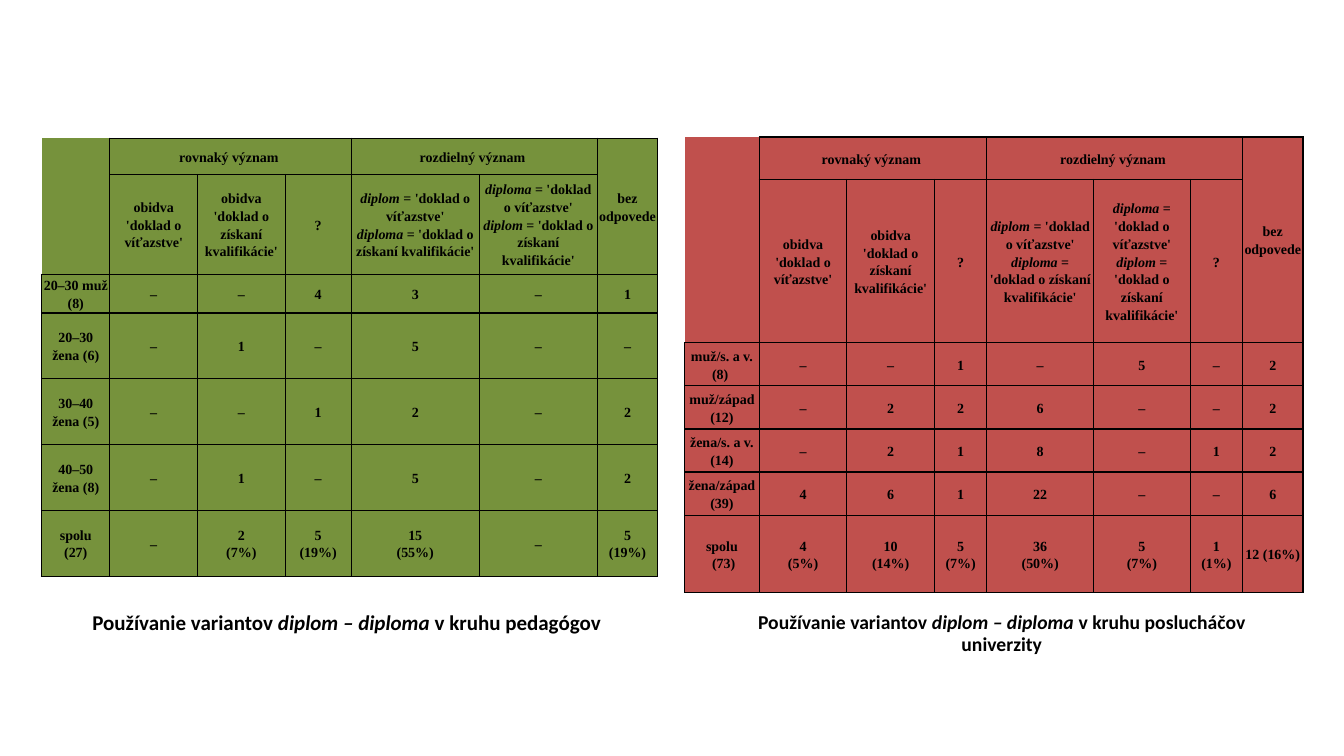
from dataclasses import dataclass

from lxml.etree import SubElement
from pptx import Presentation
from pptx.dml.color import RGBColor
from pptx.enum.text import MSO_ANCHOR, PP_ALIGN
from pptx.oxml.ns import qn
from pptx.util import Pt


@dataclass(frozen=True)
class Theme:
    green: str = "76923C"
    red: str = "C0504D"
    black: str = "000000"
    table_font: str = "Times New Roman"
    caption_font: str = "Calibri"
    table_size: float = 10
    teachers_caption_size: float = 15
    students_caption_size: float = 14
    border_width: float = 1


THEME = Theme()

# Asterisks enclose italic words; a line break starts a new paragraph.
SAME = "rovnaký význam "
DIFFERENT = "rozdielný význam "
NO_ANSWER = "bez odpovede"
MEANINGS = [
    "",
    "obidva 'doklad o víťazstve'",
    "obidva 'doklad o získaní kvalifikácie'",
    "?",
    "*diplom* = 'doklad o víťazstve'\n*diploma* = 'doklad o získaní kvalifikácie'",
    "*diploma *= 'doklad o víťazstve'\n*diplom* = 'doklad o získaní kvalifikácie'",
]

TEACHERS = [
    ["", SAME, "", "", DIFFERENT, "", NO_ANSWER],
    [*MEANINGS, ""],
    ["20–30 muž (8)", "–", "–", "4", "3", "–", "1"],
    ["20–30\nžena (6)", "–", "1", "–", "5", "–", "–"],
    ["30–40\nžena (5)", "–", "–", "1", "2", "–", "2"],
    ["40–50\nžena (8)", "–", "1", "–", "5", "–", "2"],
    ["spolu\n(27)", "–", "2\n(7%)", "5\n(19%)", "15\n(55%)", "–", "5\n(19%)"],
]
STUDENTS = [
    ["", SAME, "", "", DIFFERENT, "", "", NO_ANSWER],
    [*MEANINGS, "?", ""],
    ["muž/s. a v. (8) ", "–", "–", "1", "–", "5", "–", "2"],
    ["muž/západ (12)", "–", "2", "2", "6", "–", "–", "2"],
    ["žena/s. a v. (14)", "–", "2", "1", "8", "–", "1", "2"],
    ["žena/západ (39)", "4", "6", "1", "22", "–", "–", "6"],
    ["spolu\n (73)", "4\n(5%)", "10\n(14%)", "5\n(7%)", "36\n(50%)",
     "5\n(7%)", "1\n(1%)", "12 (16%)"],
]


def write_text(frame, text, font_name, size, line_spacing):
    """Fill a text frame with centred bold paragraphs."""
    frame.word_wrap = True
    for index, line in enumerate(text.split("\n")):
        para = frame.add_paragraph() if index else frame.paragraphs[0]
        para.alignment = PP_ALIGN.CENTER
        para.line_spacing = line_spacing
        para.font.name = font_name
        para.font.size = Pt(size)
        para.font.bold = True
        para.font.color.rgb = RGBColor.from_string(THEME.black)
        for part, words in enumerate(line.split("*")):
            if words:
                span = para.add_run()
                span.text = words
                if part % 2:
                    span.font.italic = True


def set_borders(cell, drawn_sides):
    """Draw the named sides (L, R, T, B) and clear the others."""
    properties = cell._tc.get_or_add_tcPr()
    for index, side in enumerate("LRTB"):
        line = properties.makeelement(qn(f"a:ln{side}"), {"w": str(Pt(THEME.border_width))})
        properties.insert(index, line)
        if side in drawn_sides:
            fill = SubElement(line, qn("a:solidFill"))
            SubElement(fill, qn("a:srgbClr"), val=THEME.black)
        else:
            SubElement(line, qn("a:noFill"))


def add_survey_table(page, box, rows, widths, heights, color):
    """Place a survey table with two header rows in the box."""
    frame = page.shapes.add_table(len(rows), len(widths), *map(Pt, box))
    table = frame.table
    table.first_row = False
    table.horz_banding = False
    for column, width in zip(table.columns, widths):
        column.width = Pt(width)
    for row, height in zip(table.rows, heights):
        row.height = Pt(height)

    # Cells
    for row_index, row in enumerate(rows):
        for column_index, text in enumerate(row):
            cell = table.cell(row_index, column_index)
            cell.margin_left = cell.margin_right = Pt(0.75)
            cell.margin_top = cell.margin_bottom = Pt(0)
            cell.vertical_anchor = MSO_ANCHOR.MIDDLE
            cell.fill.solid()
            cell.fill.fore_color.rgb = RGBColor.from_string(color)
            write_text(cell.text_frame, text, THEME.table_font, THEME.table_size, 1.15)
            corner = column_index == 0 and row_index < 2
            set_borders(cell, ("R", "RB")[row_index] if corner else "LRTB")

    # Merged headings
    last = len(widths) - 1
    table.cell(0, 1).merge(table.cell(0, 3))
    table.cell(0, 4).merge(table.cell(0, last - 1))
    table.cell(0, last).merge(table.cell(1, last))


def add_caption(page, box, text, size):
    """Place a bottom-anchored caption in the box."""
    frame = page.shapes.add_textbox(*map(Pt, box)).text_frame
    frame.vertical_anchor = MSO_ANCHOR.BOTTOM
    write_text(frame, text, THEME.caption_font, size, 0.9)
    frame.paragraphs[0].space_before = Pt(10)


def main():
    deck = Presentation()
    deck.slide_width, deck.slide_height = Pt(960), Pt(540)
    page = deck.slides.add_slide(deck.slide_layouts[6])

    # Teachers
    add_caption(page, (44.6, 429, 406, 28),
                "Používanie variantov* diplom – diploma* v kruhu pedagógov",
                THEME.teachers_caption_size)
    add_survey_table(page, (29.7, 98.8, 440, 324), TEACHERS,
                     [48.8, 62.6, 62.6, 47.2, 91.5, 84.3, 43.2],
                     [25.8, 71.3, 25.5] + [47] * 4, THEME.green)

    # Students
    add_caption(page, (507.6, 427.7, 416, 44),
                "Používanie variantov* diplom – diploma* v kruhu poslucháčov univerzity",
                THEME.students_caption_size)
    add_survey_table(page, (489, 97.8, 442, 325.4), STUDENTS,
                     [53.3, 62.6, 62.6, 37.4, 76.3, 69, 37.4, 43.2],
                     [30.5, 116.6] + [30.8] * 4 + [55.5], THEME.red)

    deck.save("out.pptx")


if __name__ == "__main__":
    main()
